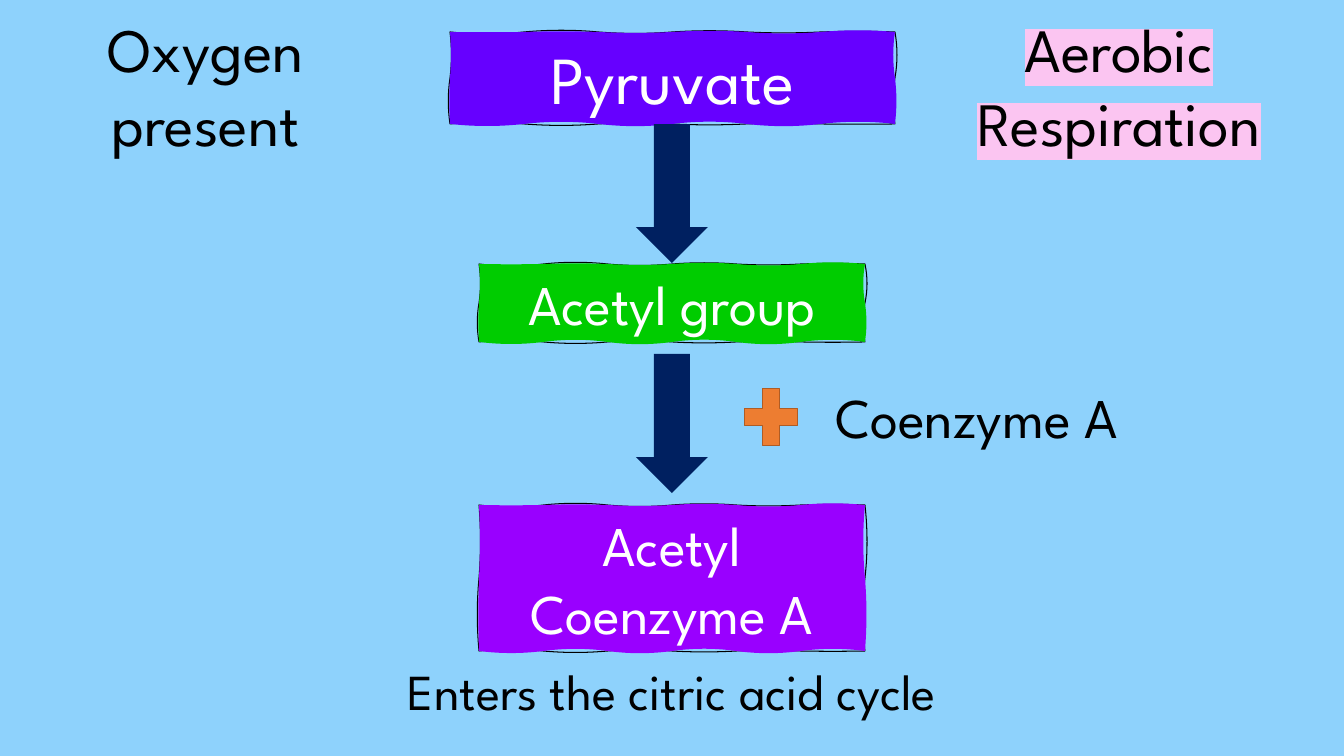
from math import sin

from lxml.etree import SubElement
from pptx import Presentation
from pptx.dml.color import RGBColor
from pptx.enum.shapes import MSO_SHAPE as SHAPE
from pptx.enum.text import MSO_ANCHOR as ANCHOR, MSO_AUTO_SIZE as AUTO, PP_ALIGN as ALIGN
from pptx.oxml.ns import qn
from pptx.util import Emu, Pt

EMU_PER_PX = 12192000 / 1344
FONT = "League Spartan"
COLORS = {
    "page": "FFFFF8", "sky": "8ED2FC", "pink": "FBC5F1",
    "violet": "6600FF", "green": "00CC00", "purple": "9900FF",
    "navy": "002060", "orange": "ED7D31", "rust": "AF5C24",
    "black": "000000", "white": "FFFFFF",
}


def px(n):
    return Emu(round(n * EMU_PER_PX))


def rgb(name):
    return RGBColor.from_string(COLORS[name])


def paint(sp, fill, line=None, weight=1):
    sp.shadow.inherit = False
    sp.fill.solid()
    sp.fill.fore_color.rgb = rgb(fill)
    if line:
        sp.line.color.rgb = rgb(line)
        sp.line.width = Pt(weight)
    else:
        sp.line.fill.background()


def write(sp, text, size, color, highlight=None, wrap=True, anchor=ANCHOR.TOP):
    tf = sp.text_frame
    tf.word_wrap = wrap
    tf.auto_size = AUTO.SHAPE_TO_FIT_TEXT
    tf.vertical_anchor = anchor
    p = tf.paragraphs[0]
    p.alignment = ALIGN.CENTER
    r = p.add_run()
    r.text = text
    r.font.size = Pt(size)
    r.font.name = FONT
    r.font.color.rgb = rgb(color)
    if highlight:
        rPr = r.font._element
        mark = SubElement(rPr, qn("a:highlight"))
        SubElement(mark, qn("a:srgbClr")).set("val", COLORS[highlight])
        rPr.find(qn("a:solidFill")).addnext(mark)


def add_preset(slide, kind, box, fill, line=None):
    sp = slide.shapes.add_shape(kind, *map(px, box))
    paint(sp, fill, line)


def add_label(slide, box, text, size, highlight=None, wrap=True):
    sp = slide.shapes.add_textbox(*map(px, box))
    write(sp, text, size, "black", highlight, wrap)


def add_segment(path, tag, points):
    segment = SubElement(path, qn(tag))
    for x, y in points:
        pt = SubElement(segment, qn("a:pt"))
        pt.set("x", str(px(x)))
        pt.set("y", str(px(y)))


def draw_wavy_path(path, w, h, phase):
    corners = [(0, 0), (w, 0), (w, h), (0, h), (0, 0)]
    add_segment(path, "a:moveTo", corners[:1])
    for side, ((x0, y0), (x1, y1)) in enumerate(zip(corners, corners[1:])):
        flat = side % 2 == 0
        count = 6 if flat else 2
        for i in range(count):
            sway = 3 * sin(3 * i + side + phase)
            curve = []
            for third, bend in ((1, sway), (2, sway), (3, 0)):
                t = (i + third / 3) / count
                x, y = x0 + (x1 - x0) * t, y0 + (y1 - y0) * t
                curve.append((x, y + bend) if flat else (x + bend, y))
            add_segment(path, "a:cubicBezTo", curve)
    SubElement(path, qn("a:close"))


def add_sketch_box(slide, box, fill, text, size):
    x, y, w, h = box
    builder = slide.shapes.build_freeform(px(x), px(y), scale=1.0)
    builder.add_line_segments(
        [(px(x + w), px(y)), (px(x + w), px(y + h)), (px(x), px(y + h))], close=True)
    sp = builder.convert_to_shape()
    paint(sp, fill, "black", 0.75)

    paths = next(sp._element.iter(qn("a:pathLst")))
    paths.remove(paths[0])
    for phase, part, hidden in ((1, "fill", "none"), (3, "stroke", "0")):
        path = SubElement(paths, qn("a:path"))
        path.set("w", str(sp.width))
        path.set("h", str(sp.height))
        path.set(part, hidden)
        draw_wavy_path(path, w, h, phase)

    write(sp, text, size, "white", anchor=ANCHOR.MIDDLE)


def main():
    prs = Presentation()
    prs.slide_width, prs.slide_height = px(1344), px(756)
    slide = prs.slides.add_slide(prs.slide_layouts[6])
    slide.background.fill.solid()
    slide.background.fill.fore_color.rgb = rgb("page")
    add_preset(slide, SHAPE.RECTANGLE, (0, 0, 1344, 756), "sky")

    add_sketch_box(slide, (450, 32, 445, 92), "violet", "Pyruvate", 48)
    add_label(slide, (925, 6, 388, 159), "Aerobic Respiration", 44, "pink")
    add_label(slide, (50, 6, 311, 159), "Oxygen present", 44, "sky")
    add_preset(slide, SHAPE.DOWN_ARROW, (636, 124, 72, 139), "navy")
    add_sketch_box(slide, (479, 264, 386, 78), "green", "Acetyl group", 40)
    add_preset(slide, SHAPE.DOWN_ARROW, (636, 354, 72, 139), "navy")
    add_sketch_box(slide, (479, 505, 386, 146), "purple", "Acetyl Coenzyme A", 40)
    add_preset(slide, SHAPE.MATH_PLUS, (735, 378, 72, 78), "orange", "rust")
    add_label(slide, (795, 378, 363, 78), "Coenzyme A", 40, wrap=False)
    add_label(slide, (335, 655, 674, 72), "Enters the citric acid cycle", 36, wrap=False)

    prs.save("out.pptx")


if __name__ == "__main__":
    main()
